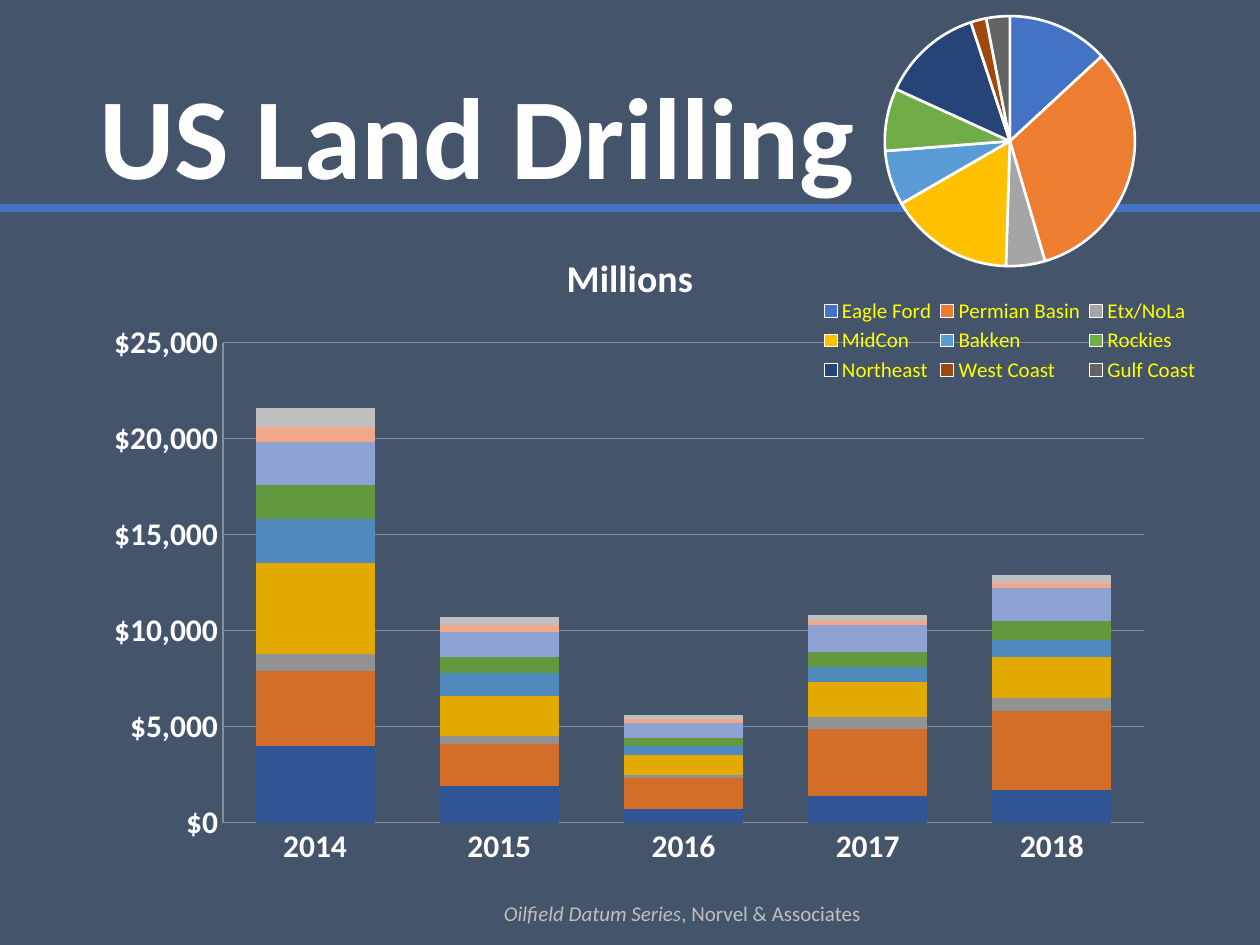
from lxml import etree
from pptx import Presentation
from pptx.chart.data import CategoryChartData
from pptx.dml.color import RGBColor
from pptx.enum.chart import XL_CHART_TYPE, XL_LEGEND_POSITION, XL_TICK_MARK
from pptx.enum.shapes import MSO_CONNECTOR
from pptx.enum.text import MSO_ANCHOR, MSO_AUTO_SIZE, PP_ALIGN
from pptx.oxml.ns import qn
from pptx.util import Inches, Pt

STACKED, PIE = XL_CHART_TYPE.COLUMN_STACKED, XL_CHART_TYPE.PIE
NO_TICK = XL_TICK_MARK.NONE
TITLE_ONLY = 5
FONT = "Calibri"
BACKGROUND, WHITE, YELLOW = "44546A", "FFFFFF", "FFFF00"
RULE, GRID, MUTED = "4472C4", "878E99", "BFBFBF"

TITLE = "US Land Drilling"
SOURCE = [("Oilfield Datum Series", True), (", Norvel & Associates", False)]
YEARS = ["2014", "2015", "2016", "2017", "2018"]
SPENDING = [
    ("2F5597", [4000, 1900, 700, 1400, 1700]),
    ("D26E2A", [3900, 2200, 1600, 3500, 4100]),
    ("929292", [900, 400, 200, 600, 700]),
    ("E2AA00", [4700, 2100, 1000, 1800, 2100]),
    ("5089BC", [2300, 1200, 500, 800, 900]),
    ("62993E", [1800, 800, 400, 800, 1000]),
    ("8FA2D4", [2200, 1300, 800, 1400, 1700]),
    ("F1A78A", [800, 400, 200, 200, 300]),
    ("BFBFBF", [1000, 400, 200, 300, 400]),
]
REGIONS = [
    ("Eagle Ford", 13, "4472C4"),
    ("Permian Basin", 32, "ED7D31"),
    ("Etx/NoLa", 5, "A5A5A5"),
    ("MidCon", 16, "FFC000"),
    ("Bakken", 7, "5B9BD5"),
    ("Rockies", 8, "70AD47"),
    ("Northeast", 13, "264478"),
    ("West Coast", 2, "9E480E"),
    ("Gulf Coast", 3, "636363"),
]


def rgb(value):
    """Turn a hex string into a colour."""
    return RGBColor.from_string(value)


def style_font(font, size, color, bold=False, italic=False):
    """Set the look of a font."""
    font.name, font.size, font.bold, font.italic = FONT, Pt(size), bold, italic
    font.color.rgb = rgb(color)


def fill_solid(fill, color):
    """Give a fill one colour."""
    fill.solid()
    fill.fore_color.rgb = rgb(color)


def style_line(line, color, width):
    """Set the colour and width of a line."""
    line.color.rgb = rgb(color)
    line.width = Pt(width)


def add_run(paragraph, text, *style):
    """Append one styled run."""
    run = paragraph.add_run()
    run.text = text
    style_font(run.font, *style)


def set_layout(parent, position, box, inner=False):
    """Place a chart part by fractions of the chart area."""
    layout = parent.find(qn("c:layout"))
    if layout is None:
        layout = etree.Element(qn("c:layout"))
        parent.insert(position, layout)
    manual = etree.SubElement(layout, qn("c:manualLayout"))
    settings = [("layoutTarget", "inner")] if inner else []
    settings += [("xMode", "edge"), ("yMode", "edge")] + list(zip("xywh", box))
    for name, value in settings:
        etree.SubElement(manual, qn(f"c:{name}")).set("val", str(value))


def add_chart(slide, kind, box, categories, series, plot_box):
    """Add a chart with a fixed plot area."""
    data = CategoryChartData()
    data.categories = categories
    for number, values in enumerate(series, 1):
        data.add_series(f"Series {number}", values)
    chart = slide.shapes.add_chart(kind, *map(Inches, box), data).chart
    set_layout(chart.element.find(".//" + qn("c:plotArea")), 0, plot_box, inner=True)
    return chart


def add_spending_chart(slide):
    """Add the stacked columns of yearly spending."""
    chart = add_chart(slide, STACKED, (0.75, 1.78, 8.5, 5.22), YEARS,
                      [values for _, values in SPENDING], (0.12, 0.18, 0.86, 0.73))
    style_font(chart.font, 18, WHITE, True)
    chart.has_legend = False
    chart.has_title = True
    add_run(chart.chart_title.text_frame.paragraphs[0], "Millions", 21.6, WHITE, True)
    plot = chart.plots[0]
    plot.gap_width, plot.overlap, plot.vary_by_categories = 55, 100, False
    for series, (color, _) in zip(plot.series, SPENDING):
        fill_solid(series.format.fill, color)
    for axis in (chart.category_axis, chart.value_axis):
        axis.major_tick_mark = axis.minor_tick_mark = NO_TICK
        style_line(axis.format.line, GRID, 0.75)
    axis = chart.value_axis
    axis.minimum_scale, axis.maximum_scale, axis.major_unit = 0, 25000, 5000
    axis.tick_labels.number_format = '"$"#,##0'
    axis.tick_labels.number_format_is_linked = False
    style_line(axis.major_gridlines.format.line, GRID, 0.75)


def add_region_chart(slide):
    """Add the pie of regional shares."""
    names, shares, colors = zip(*REGIONS)
    chart = add_chart(slide, PIE, (6.03, 0, 3.97, 3.07), names, [shares],
                      (0.25, 0.04, 0.5, 0.65))
    style_font(chart.font, 10, YELLOW)
    chart.has_title = False
    chart.has_legend = True
    legend = chart.legend
    legend.position = XL_LEGEND_POSITION.BOTTOM
    legend.include_in_layout = False
    style_font(legend.font, 12, YELLOW)
    set_layout(chart.element.find(".//" + qn("c:legend")), 1, (0.11, 0.76, 0.78, 0.24))
    for index, color in enumerate(colors):
        point = chart.plots[0].series[0].points[index]
        fill_solid(point.format.fill, color)
        style_line(point.format.line, WHITE, 1.5)


def add_title(slide):
    """Fill and place the title placeholder."""
    title = slide.shapes.title
    title.left, title.top, title.width, title.height = map(Inches, (0.69, 0.4, 8.62, 1.45))
    frame = title.text_frame
    frame.auto_size, frame.vertical_anchor = MSO_AUTO_SIZE.NONE, MSO_ANCHOR.MIDDLE
    paragraph = frame.paragraphs[0]
    paragraph.alignment, paragraph.line_spacing = PP_ALIGN.LEFT, 0.9
    add_run(paragraph, TITLE, 66, WHITE, True)


def add_rule(slide):
    """Draw the line under the title."""
    ends = map(Inches, (0, 1.65, 10, 1.65))
    rule = slide.shapes.add_connector(MSO_CONNECTOR.STRAIGHT, *ends)
    style_line(rule.line, RULE, 4.25)
    etree.SubElement(rule.element.spPr, qn("a:effectLst"))


def add_source(slide):
    """Add the source line at the foot."""
    box = slide.shapes.add_textbox(*map(Inches, (2.76, 7.1, 5.31, 0.3)))
    box.text_frame.word_wrap = True
    paragraph = box.text_frame.paragraphs[0]
    paragraph.alignment = PP_ALIGN.CENTER
    for text, italic in SOURCE:
        add_run(paragraph, text, 12, MUTED, False, italic)


def main():
    """Build and save the slide."""
    presentation = Presentation()
    presentation.slide_width, presentation.slide_height = Inches(10), Inches(7.5)
    slide = presentation.slides.add_slide(presentation.slide_layouts[TITLE_ONLY])
    fill_solid(slide.background.fill, BACKGROUND)
    add_title(slide)
    add_rule(slide)
    add_source(slide)
    add_spending_chart(slide)
    add_region_chart(slide)
    presentation.save("out.pptx")


if __name__ == "__main__":
    main()
